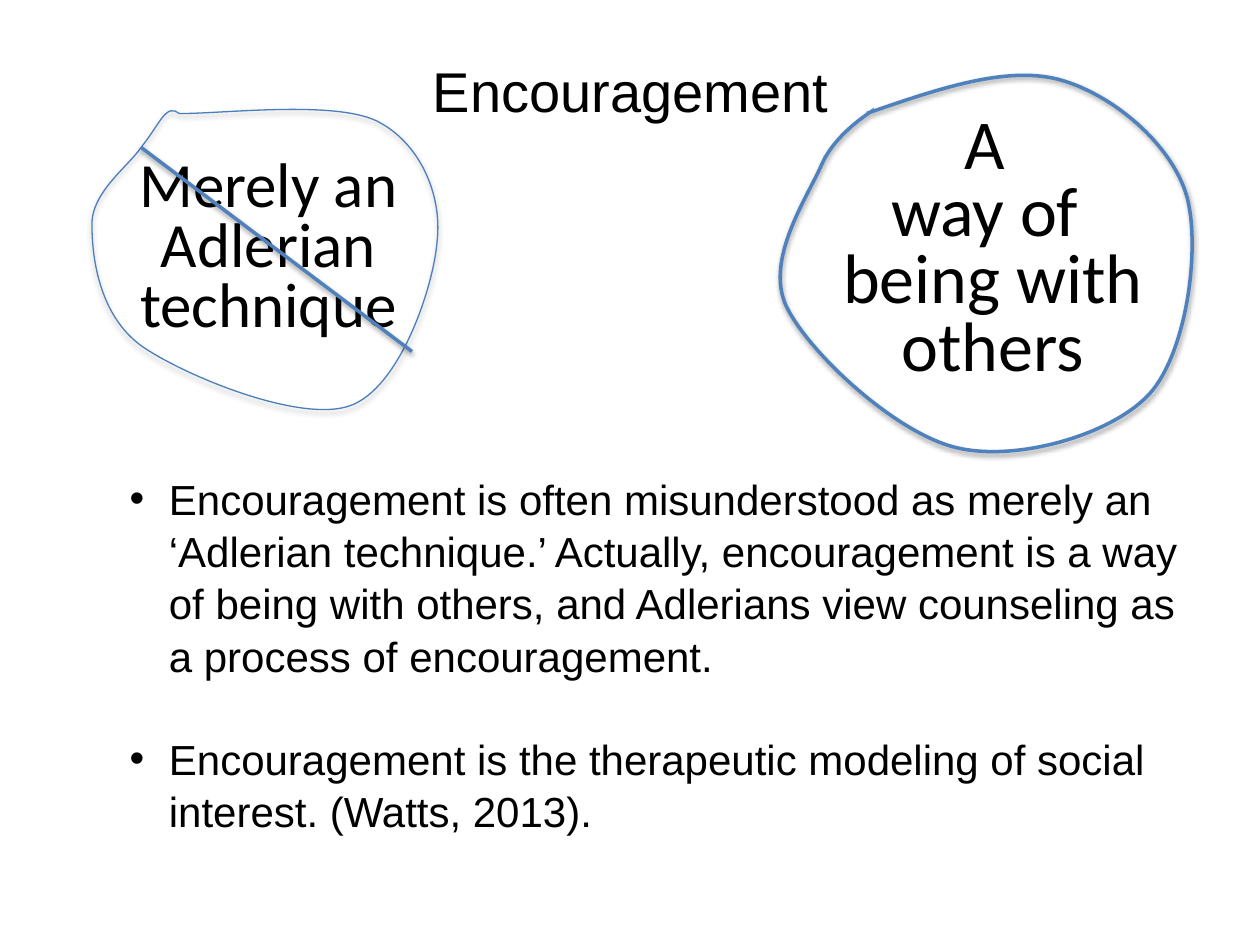
import pptx
import pptx.dml.color
import pptx.enum.shapes
import pptx.enum.text
import pptx.oxml
import pptx.oxml.ns
import pptx.util
from pptx.util import Inches

CENTER = pptx.enum.text.PP_ALIGN.CENTER
BLUE = "4F81BD"
A_NS = pptx.oxml.ns.nsdecls("a")

# Each outline is a start point followed by cubic curves (control, control, end).
WAY_BOX = (6.19, 0.6, 3.27, 2.99)
WAY_START = (6.88, 0.9)
WAY_CURVES = [
    ((7.43, 0.71), (7.98, 0.52), (8.4, 0.63)),
    ((8.82, 0.74), (9.3, 1.14), (9.42, 1.56)),
    ((9.53, 1.97), (9.42, 2.8), (9.12, 3.13)),
    ((8.81, 3.46), (8.05, 3.67), (7.58, 3.55)),
    ((7.1, 3.43), (6.42, 2.8), (6.24, 2.43)),
    ((6.07, 2.06), (6.4, 1.58), (6.52, 1.31)),
    ((6.63, 1.05), (6.94, 0.87), (6.94, 0.87)),
]
TECHNIQUE_BOX = (0.73, 0.87, 2.75, 2.38)
TECHNIQUE_START = (1.32, 0.9)
TECHNIQUE_CURVES = [
    ((1.37, 0.85), (1.42, 0.9), (1.42, 0.9)),
    ((1.7, 0.91), (2.64, 0.79), (2.99, 0.96)),
    ((3.33, 1.13), (3.51, 1.54), (3.47, 1.91)),
    ((3.44, 2.29), (3.17, 3.08), (2.78, 3.22)),
    ((2.39, 3.36), (1.48, 2.99), (1.13, 2.75)),
    ((0.79, 2.51), (0.73, 2.05), (0.73, 1.79)),
    ((0.72, 1.53), (1.02, 1.32), (1.12, 1.17)),
    ((1.23, 1.03), (1.27, 0.94), (1.32, 0.9)),
]
POINTS = [
    "Encouragement is often misunderstood as merely an ‘Adlerian technique.’ "
    "Actually, encouragement is a way of being with others, and Adlerians view "
    "counseling as a process of encouragement.",
    "Encouragement is the therapeutic modeling of social interest. (Watts, 2013).",
]


def color(hex_value):
    return pptx.dml.color.RGBColor.from_string(hex_value)


def add_text(s, box, lines, size, font, align=None, spacing=None, wrap=True):
    """Add a text box with one paragraph per line and return its paragraphs."""
    tf = s.shapes.add_textbox(*map(Inches, box)).text_frame
    tf.word_wrap = wrap
    tf.auto_size = pptx.enum.text.MSO_AUTO_SIZE.SHAPE_TO_FIT_TEXT
    for i, line in enumerate(lines):
        p = tf.paragraphs[0] if i == 0 else tf.add_paragraph()
        p.alignment = align
        p.line_spacing = spacing
        r = p.add_run()
        r.text = line
        r.font.size = pptx.util.Pt(size)
        r.font.name = font
        r.font.color.rgb = color("000000")
    return tf.paragraphs


def add_bullet(p):
    pPr = p._p.get_or_add_pPr()
    indent = pptx.util.Pt(22.5)
    pPr.set("marL", str(indent))
    pPr.set("indent", str(-indent))
    for tag in ('buFont typeface="Arial"', 'buChar char="•"'):
        name, attribute = tag.split(" ")
        pPr.append(pptx.oxml.parse_xml(f"<a:{name} {A_NS} {attribute}/>"))


def style_line(sp, hex_value, width, alpha, distance):
    """Set the stroke and the soft shadow that falls straight down."""
    sp.line.color.rgb = color(hex_value)
    sp.line.width = pptx.util.Pt(width)
    sp._element.spPr.append(pptx.oxml.parse_xml(
        f'<a:effectLst {A_NS}>'
        f'<a:outerShdw blurRad="{pptx.util.Pt(3.1)}" '
        f'dist="{pptx.util.Pt(distance)}" dir="5400000" rotWithShape="0">'
        f'<a:srgbClr val="000000"><a:alpha val="{alpha * 1000}"/></a:srgbClr>'
        '</a:outerShdw></a:effectLst>'))


def add_outline(s, box, start, curves, close, **line):
    """Build a freeform through the curve ends, then bend its segments."""
    builder = s.shapes.build_freeform(*map(Inches, start))
    ends = [tuple(map(Inches, curve[-1])) for curve in curves]
    builder.add_line_segments(ends, close=close)
    sp = builder.convert_to_shape()
    sp.left, sp.top, sp.width, sp.height = map(Inches, box)

    def point(xy):
        x, y = (Inches(value - origin) for value, origin in zip(xy, box))
        return f'<a:pt x="{x}" y="{y}"/>'

    segments = f"<a:moveTo>{point(start)}</a:moveTo>"
    for curve in curves:
        segments += f"<a:cubicBezTo>{''.join(map(point, curve))}</a:cubicBezTo>"
    if close:
        segments += "<a:close/>"
    outline = next(sp._element.iter(pptx.oxml.ns.qn("a:path")))
    outline.getparent().replace(outline, pptx.oxml.parse_xml(
        f'<a:path {A_NS} w="{sp.width}" h="{sp.height}">{segments}</a:path>'))

    sp.fill.background()
    style_line(sp, **line)


def add_strike(s, start, end, **line):
    sp = s.shapes.add_connector(
        pptx.enum.shapes.MSO_CONNECTOR.STRAIGHT, *map(Inches, start + end))
    style_line(sp, **line)


def main():
    prs = pptx.Presentation()
    prs.slide_width, prs.slide_height = Inches(10), Inches(7.5)
    s = prs.slides.add_slide(prs.slide_layouts[6])

    add_text(s, (1.96, 0.4, 6.09, 0.64), ["Encouragement"], 32, "Arial", CENTER)
    add_text(s, (0.99, 1.21, 2.28, 1.58), ["Merely an", "Adlerian", "technique"],
             36, "Calibri", CENTER, 0.8, wrap=False)
    add_text(s, (6.3, 0.87, 3.16, 2.28), ["A ", "way of ", "being with others"],
             40, "Calibri", CENTER, 0.8)

    bold_line = dict(hex_value=BLUE, width=2, alpha=38, distance=1.6)
    add_outline(s, WAY_BOX, WAY_START, WAY_CURVES, close=False, **bold_line)
    add_outline(s, TECHNIQUE_BOX, TECHNIQUE_START, TECHNIQUE_CURVES, close=True,
                hex_value="4B7EBC", width=0.75, alpha=35, distance=1.8)
    add_strike(s, (1.12, 1.17), (3.27, 2.79), **bold_line)

    paragraphs = add_text(s, (0.93, 3.69, 8.53, 2.93), POINTS, 24, "Arial",
                          spacing=1.04)
    paragraphs[1].space_before = pptx.util.Pt(28.8)
    for p in paragraphs:
        add_bullet(p)

    prs.save("out.pptx")


if __name__ == "__main__":
    main()
